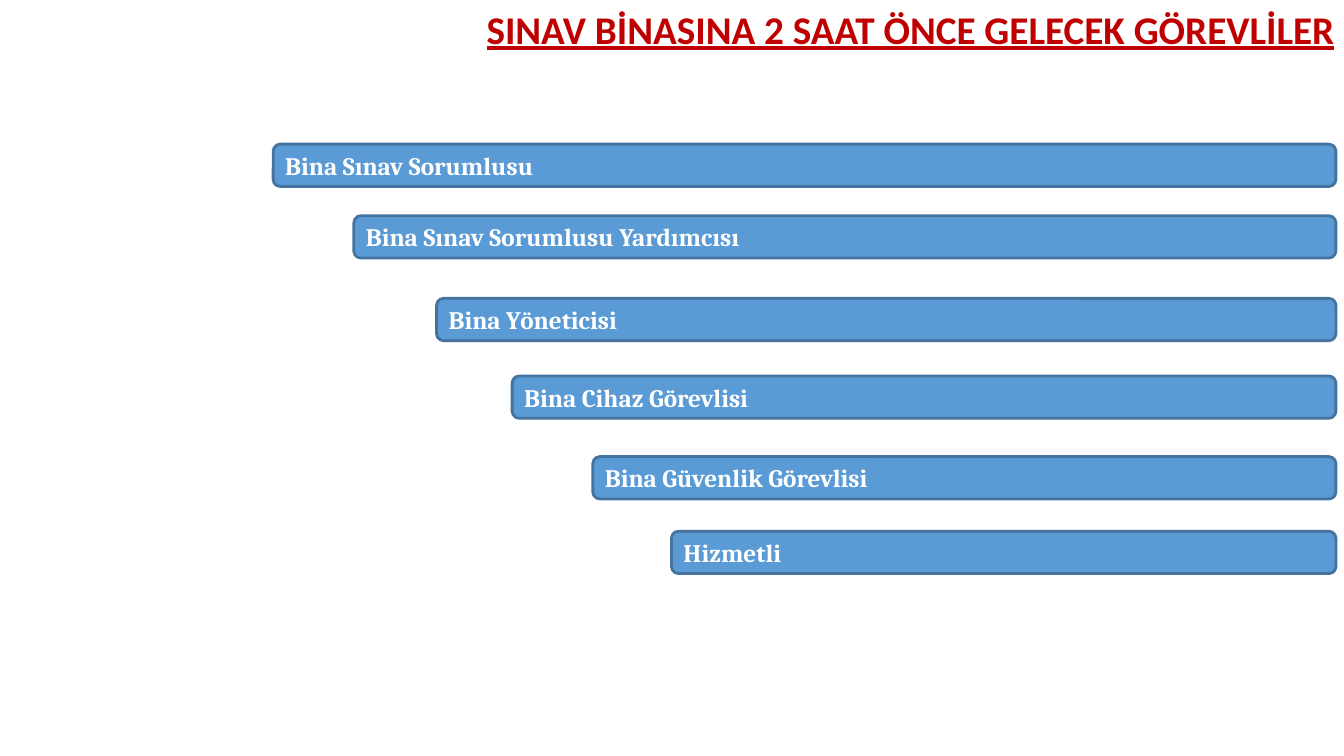
import pptx
import pptx.util
import pptx.dml.color
import pptx.enum.shapes
import pptx.enum.text
import pptx.oxml

TITLE = "SINAV BİNASINA 2 SAAT ÖNCE GELECEK GÖREVLİLER"
STAFF_BARS = [
    ("Bina Sınav Sorumlusu", 2.71, 1.43),
    ("Bina Sınav Sorumlusu Yardımcısı", 3.51, 2.14),
    ("Bina Yöneticisi", 4.33, 2.96),
    ("Bina Cihaz Görevlisi", 5.08, 3.73),
    ("Bina Güvenlik Görevlisi", 5.88, 4.53),
    ("Hizmetli", 6.66, 5.27),
]
COLORS = {"title": "C00000", "bar": "5B9BD5", "border": "43739E", "label": "FFFFFF"}
SLIDE_WIDTH, SLIDE_HEIGHT = 13.33, 7.5
TITLE_LEFT, TITLE_HEIGHT = 3.92, SLIDE_HEIGHT / 10
BAR_RIGHT, BAR_HEIGHT = 13.25, 0.42
TEXT_SHADOW = (
    '<a:effectLst xmlns:a="http://schemas.openxmlformats.org/drawingml/2006/main">'
    '<a:outerShdw blurRad="38100" dist="38100" dir="2700000" algn="tl">'
    '<a:srgbClr val="000000"><a:alpha val="43000"/></a:srgbClr>'
    '</a:outerShdw></a:effectLst>'
)


def color(name):
    return pptx.dml.color.RGBColor.from_string(COLORS[name])


def box(left, top, width, height):
    return [pptx.util.Inches(length) for length in (left, top, width, height)]


def write(shape, text, font_name, size, color_name, alignment, anchor):
    frame = shape.text_frame
    frame.word_wrap = True
    frame.vertical_anchor = anchor
    frame.text = text
    paragraph = frame.paragraphs[0]
    paragraph.alignment = alignment
    run = paragraph.runs[0]
    run.font.name = font_name
    run.font.size = pptx.util.Pt(size)
    run.font.bold = True
    run.font.color.rgb = color(color_name)
    return run


def add_title(slide):
    shape = slide.shapes.add_textbox(
        *box(TITLE_LEFT, 0, SLIDE_WIDTH - TITLE_LEFT, TITLE_HEIGHT))
    run = write(shape, TITLE, "Calibri", 28, "title",
                pptx.enum.text.PP_ALIGN.RIGHT, pptx.enum.text.MSO_ANCHOR.TOP)
    run.font.underline = True
    properties = run.font._element
    fill = properties.find(pptx.oxml.ns.qn("a:solidFill"))
    fill.addnext(pptx.oxml.parse_xml(TEXT_SHADOW))


def add_bar(slide, text, left, top):
    shape = slide.shapes.add_shape(
        pptx.enum.shapes.MSO_SHAPE.ROUNDED_RECTANGLE,
        *box(left, top, BAR_RIGHT - left, BAR_HEIGHT))
    shape.shadow.inherit = False
    shape.fill.solid()
    shape.fill.fore_color.rgb = color("bar")
    shape.line.color.rgb = color("border")
    shape.line.width = pptx.util.Pt(2)
    write(shape, text, "Cambria", 18, "label",
          pptx.enum.text.PP_ALIGN.LEFT, pptx.enum.text.MSO_ANCHOR.MIDDLE)


def main():
    presentation = pptx.Presentation()
    presentation.slide_width = pptx.util.Inches(SLIDE_WIDTH)
    presentation.slide_height = pptx.util.Inches(SLIDE_HEIGHT)
    slide = presentation.slides.add_slide(presentation.slide_layouts[6])
    add_title(slide)
    for text, left, top in STAFF_BARS:
        add_bar(slide, text, left, top)
    presentation.save("out.pptx")


if __name__ == "__main__":
    main()
